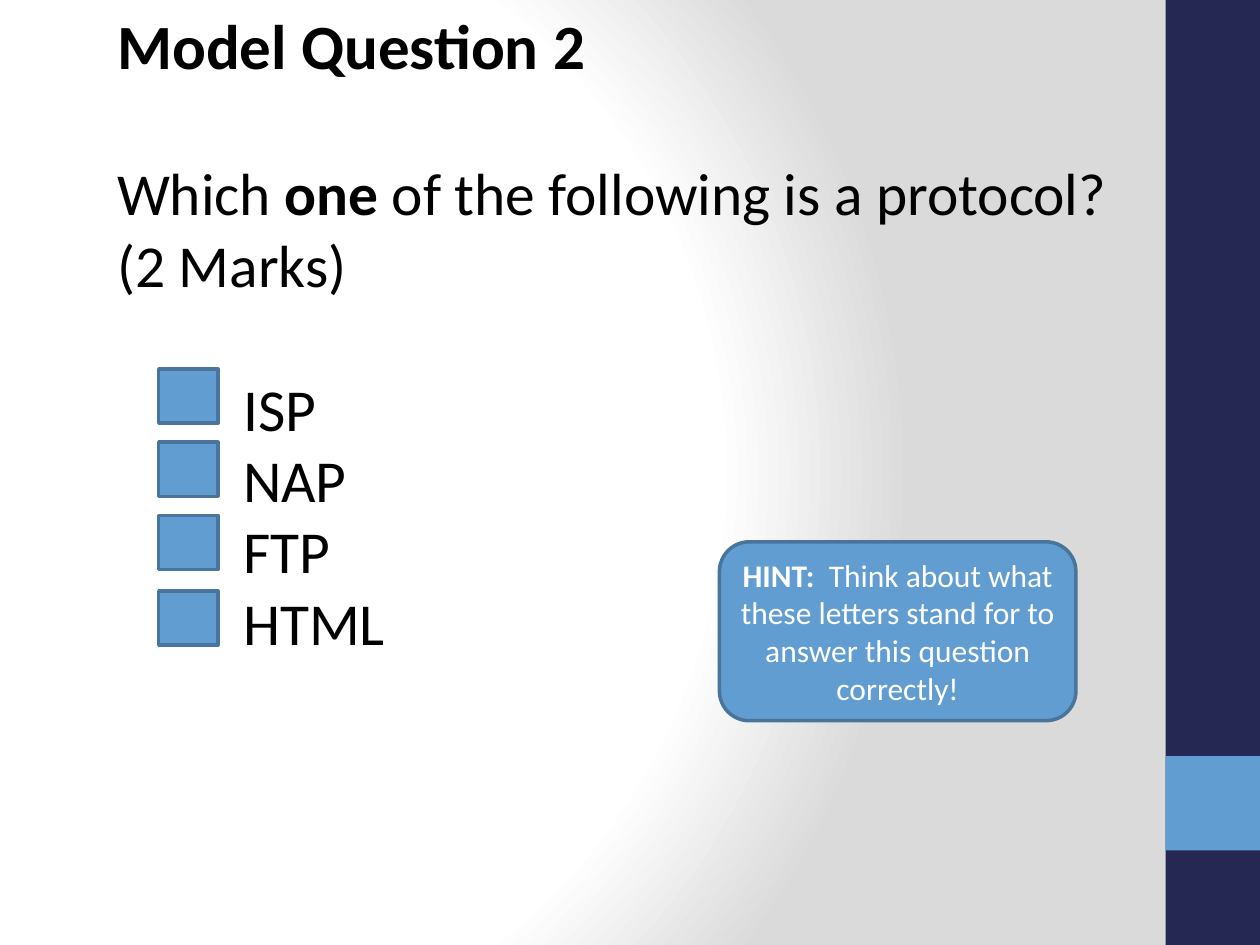
import pptx
import pptx.util
import pptx.oxml
import pptx.oxml.ns
import pptx.dml.color
import pptx.enum.shapes
import pptx.enum.text

Inches = pptx.util.Inches
Pt = pptx.util.Pt
SHAPE = pptx.enum.shapes.MSO_SHAPE
ANCHOR = pptx.enum.text.MSO_ANCHOR
ALIGN = pptx.enum.text.PP_ALIGN

COLORS = {
    "navy": "242852",
    "blue": "629DD1",
    "outline": "49749B",
    "black": "000000",
    "white": "FFFFFF",
    "grey": "DADADA",
}


def rgb(name):
    return pptx.dml.color.RGBColor.from_string(COLORS[name])


class QuestionSlide:
    font_name = "Calibri"

    def __init__(self, deck):
        self.page = deck.slides.add_slide(deck.slide_layouts[1])

    def background(self, stops, focus):
        self.page.background.fill.gradient()
        gradient = next(self.page.element.iter(pptx.oxml.ns.qn("a:gradFill")))
        stop_xml = "".join(
            f'<a:gs pos="{position * 1000}"><a:srgbClr val="{COLORS[color]}"/></a:gs>'
            for position, color in stops
        )
        rect_xml = " ".join(f'{side}="{value * 1000}"' for side, value in focus.items())
        replacement = pptx.oxml.parse_xml(
            f'<a:gradFill {pptx.oxml.ns.nsdecls("a")} rotWithShape="1">'
            f'<a:gsLst>{stop_xml}</a:gsLst>'
            f'<a:path path="circle"><a:fillToRect {rect_xml}/></a:path></a:gradFill>'
        )
        gradient.getparent().replace(gradient, replacement)

    def shape(self, kind, place, fill, line=None):
        box = self.page.shapes.add_shape(kind, *map(Inches, place))
        box.shadow.inherit = False
        box.fill.solid()
        box.fill.fore_color.rgb = rgb(fill)
        if line:
            box.line.color.rgb = rgb(line)
            box.line.width = Pt(2)
        else:
            box.line.fill.background()
        return box

    def placeholder(self, index, place):
        box = self.page.placeholders[index]
        box.left, box.top, box.width, box.height = map(Inches, place)
        return box

    def text(self, box, paragraphs, size, color, anchor=ANCHOR.TOP):
        frame = box.text_frame
        frame_format = {
            "word_wrap": True,
            "auto_size": pptx.enum.text.MSO_AUTO_SIZE.NONE,
            "vertical_anchor": anchor,
        }
        for name, value in frame_format.items():
            setattr(frame, name, value)
        for number, (runs, para_format, indent) in enumerate(paragraphs):
            para = frame.add_paragraph() if number else frame.paragraphs[0]
            properties = para._p.get_or_add_pPr()
            properties.set("marL", str(Inches(indent)))
            properties.set("indent", "0")
            properties.append(
                pptx.oxml.parse_xml(f'<a:buNone {pptx.oxml.ns.nsdecls("a")}/>')
            )
            for name, value in {"space_before": Pt(0), **para_format}.items():
                setattr(para, name, value)
            for words, bold in runs:
                span = para.add_run()
                span.text = words
                span_format = {"name": self.font_name, "size": Pt(size), "bold": bold}
                for name, value in span_format.items():
                    setattr(span.font, name, value)
                span.font.color.rgb = rgb(color)


def main():
    deck = pptx.Presentation()
    deck.slide_width, deck.slide_height = Inches(10), Inches(7.5)
    slide = QuestionSlide(deck)

    slide.background(
        [(0, "white"), (75, "white"), (100, "grey")],
        {"l": 20, "t": 50, "r": 100, "b": 50},
    )
    slide.shape(SHAPE.RECTANGLE, (9.25, 0, 0.75, 7.5), "navy")
    slide.shape(SHAPE.RECTANGLE, (9.25, 6, 0.75, 0.75), "blue")

    left_align = {"alignment": ALIGN.LEFT}
    title = slide.placeholder(0, (0.83, 0, 8.3, 0.75))
    slide.text(title, [([("Model Question 2", True)], left_align, 0)], 36, "black")

    question = [
        ("Which ", False),
        ("one", True),
        (" of the following is a protocol? (2 Marks)", False),
    ]
    options = ["ISP", "NAP", "FTP", "HTML"]
    paragraphs = [(question, left_align, 0)]
    for number, option in enumerate(options):
        gap = Pt(0 if number else 41.5)
        paragraphs.append(([(option, False)], {**left_align, "space_before": gap}, 1))
    body = slide.placeholder(1, (0.83, 1.19, 8.3, 4.67))
    slide.text(body, paragraphs, 34, "black")

    hint = slide.shape(
        SHAPE.ROUNDED_RECTANGLE, (5.71, 4.3, 2.83, 1.42), "blue", "outline"
    )
    hint_runs = [
        ("HINT: ", True),
        (" Think about what these letters stand for to answer this question correctly!", False),
    ]
    slide.text(
        hint, [(hint_runs, {"alignment": ALIGN.CENTER}, 0)], 18, "white", ANCHOR.MIDDLE
    )

    for top in (2.93, 3.51, 4.09, 4.69):
        slide.shape(SHAPE.RECTANGLE, (1.26, top, 0.47, 0.43), "blue", "outline")

    deck.save("out.pptx")


if __name__ == "__main__":
    main()
